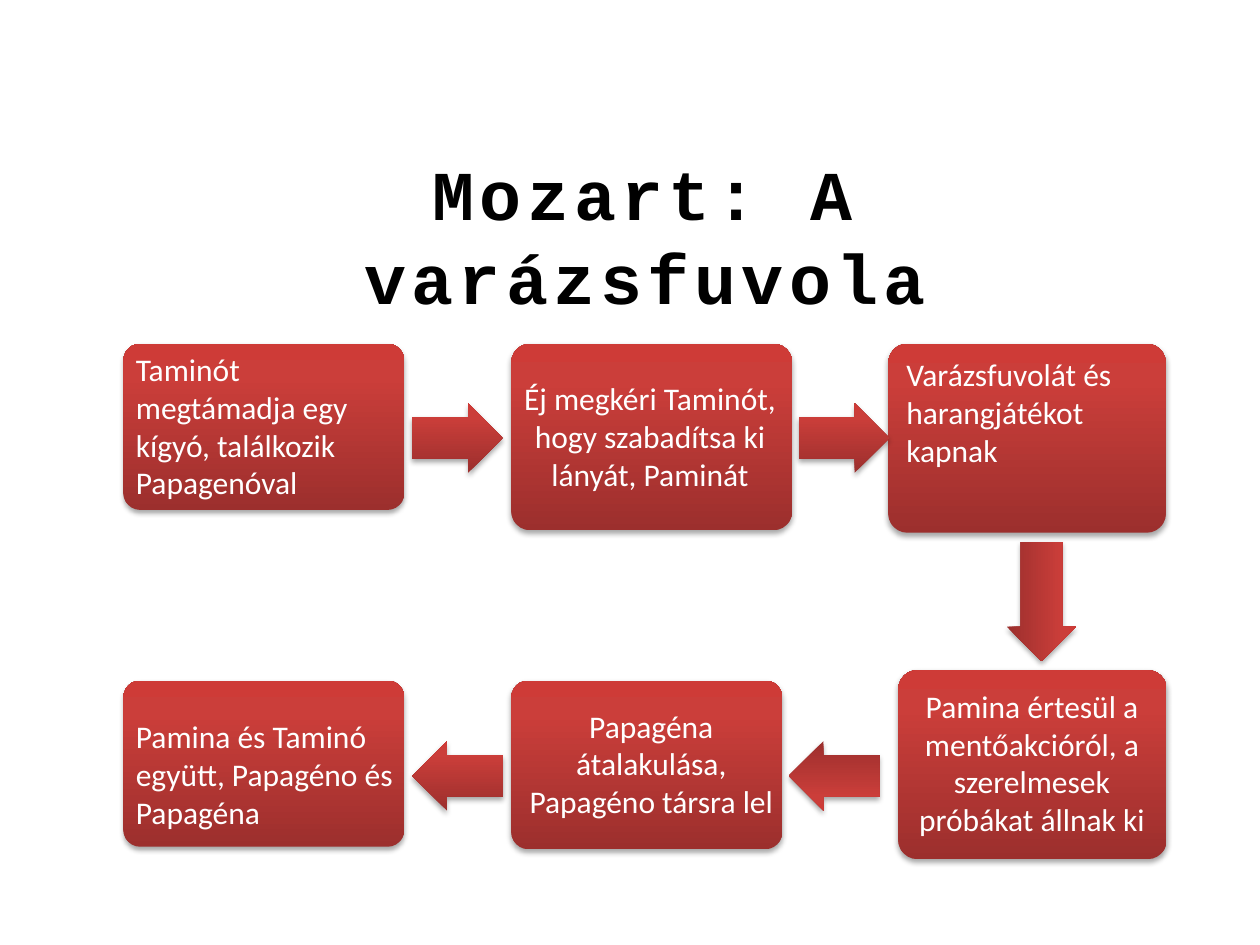
from lxml.etree import SubElement
from pptx import Presentation
from pptx.dml.color import RGBColor
from pptx.enum.shapes import MSO_SHAPE
from pptx.enum.text import MSO_ANCHOR, MSO_AUTO_SIZE, PP_ALIGN
from pptx.oxml.ns import qn
from pptx.util import Cm, Pt

GRADIENT = [(0, "9C2F2D"), (80, "CB3E3A"), (100, "CE3B37")]
LEFT, CENTER = PP_ALIGN.LEFT, PP_ALIGN.CENTER
COL_1, COL_2, COL_3 = 2.49, 10.31, 17.91
ROW_1, ROW_2 = 6.93, 13.72

# left, top, width, height
BOXES = [
    (COL_1, ROW_1, 5.66, 3.35),
    (COL_2, ROW_1, 5.66, 3.76),
    (COL_3, ROW_1, 5.59, 3.81),
    (18.11, 13.51, 5.41, 3.81),
    (COL_2, ROW_2, 5.46, 3.4),
    (COL_1, ROW_2, 5.66, 3.35),
]
# left, top, width, rotation, gradient angle
ARROWS = [
    (8.31, 8.13, 1.83, 0, 270),
    (16.1, 8.13, 1.83, 0, 270),
    (19.79, 11.43, 2.41, 90, 270),
    (15.9, 14.94, 1.83, 180, 270),
    (8.31, 14.94, 1.83, 180, 90),
]
# left, top, width, height, alignment, text
LABELS = [
    (COL_1, ROW_1, 5.79, 3.33, LEFT,
     "Taminót megtámadja egy kígyó, találkozik Papagenóval"),
    (COL_2, 7.52, 5.59, 2.57, CENTER,
     "Éj megkéri Taminót, hogy szabadítsa ki lányát, Paminát"),
    (COL_3, ROW_2, 5.79, 3.33, CENTER,
     "Pamina értesül a mentőakcióról, a szerelmesek próbákat állnak ki"),
    (COL_2, 14.12, 5.64, 2.57, CENTER,
     "Papagéna átalakulása, Papagéno társra lel"),
    (COL_1, 14.33, 6.4, 2.57, LEFT,
     "Pamina és Taminó együtt, Papagéno és Papagéna"),
]


def rgb(color):
    return RGBColor.from_string(color)


def write(tf, text, size=18, font="Calibri", color="FFFFFF", bold=False,
          align=LEFT, anchor=MSO_ANCHOR.TOP, spacing=0):
    tf.word_wrap = True
    tf.vertical_anchor = anchor
    p = tf.paragraphs[0]
    p.alignment = align
    r = p.add_run()
    r.text = text
    r.font.size = Pt(size)
    r.font.name = font
    r.font.bold = bold
    r.font.color.rgb = rgb(color)
    if spacing:
        r.font._element.set("spc", str(spacing * 100))


def add_color(parent, color):
    return SubElement(parent, qn("a:srgbClr"), val=color)


def set_gradient(sp, angle):
    """Fill with the red gradient, which turns with the shape."""
    sp.fill.gradient()
    grad = sp._element.spPr.find(qn("a:gradFill"))
    for child in list(grad):
        grad.remove(child)
    grad.set("rotWithShape", "1")
    stops = SubElement(grad, qn("a:gsLst"))
    for pos, color in GRADIENT:
        add_color(SubElement(stops, qn("a:gs"), pos=str(pos * 1000)), color)
    SubElement(grad, qn("a:lin"), ang=str(angle * 60000), scaled="0")


def set_shadow(sp):
    sp.shadow.inherit = False
    effects = sp._element.spPr.find(qn("a:effectLst"))
    shadow = SubElement(effects, qn("a:outerShdw"), blurRad=str(Pt(3.1)),
                        dist=str(Pt(1.8)), dir="5400000", rotWithShape="0")
    SubElement(add_color(shadow, "000000"), qn("a:alpha"), val="35000")


def add_red_shape(slide, kind, place, adjustments, angle=270):
    sp = slide.shapes.add_shape(kind, *map(Cm, place))
    for i, value in enumerate(adjustments):
        sp.adjustments[i] = value
    set_gradient(sp, angle)
    sp.line.fill.background()
    set_shadow(sp)
    return sp


def add_arrow(slide, left, top, width, rotation, angle):
    sp = add_red_shape(slide, MSO_SHAPE.RIGHT_ARROW, (left, top, width, 1.4),
                       (0.6, 0.5), angle)
    sp.rotation = rotation


def add_label(slide, left, top, width, height, align, text):
    tf = slide.shapes.add_textbox(*map(Cm, (left, top, width, height))).text_frame
    write(tf, text, align=align)
    tf.auto_size = MSO_AUTO_SIZE.SHAPE_TO_FIT_TEXT


def set_title(slide, text):
    title = slide.shapes.title
    title.left, title.top, title.width, title.height = map(Cm, (5.11, 3.73, 15.8, 2.01))
    write(title.text_frame, text, size=40, font="Courier New", color="000000",
          bold=True, align=CENTER, anchor=MSO_ANCHOR.MIDDLE, spacing=3)
    title.text_frame.auto_size = MSO_AUTO_SIZE.NONE


def main():
    prs = Presentation()
    prs.slide_width, prs.slide_height = Cm(25.4), Cm(19.05)
    s = prs.slides.add_slide(prs.slide_layouts[5])
    set_title(s, "Mozart: A varázsfuvola")
    boxes = [add_red_shape(s, MSO_SHAPE.ROUNDED_RECTANGLE, place, [0.1])
             for place in BOXES]
    write(boxes[2].text_frame, "Varázsfuvolát és harangjátékot kapnak")
    for arrow in ARROWS:
        add_arrow(s, *arrow)
    for label in LABELS:
        add_label(s, *label)
    prs.save("out.pptx")


if __name__ == "__main__":
    main()
